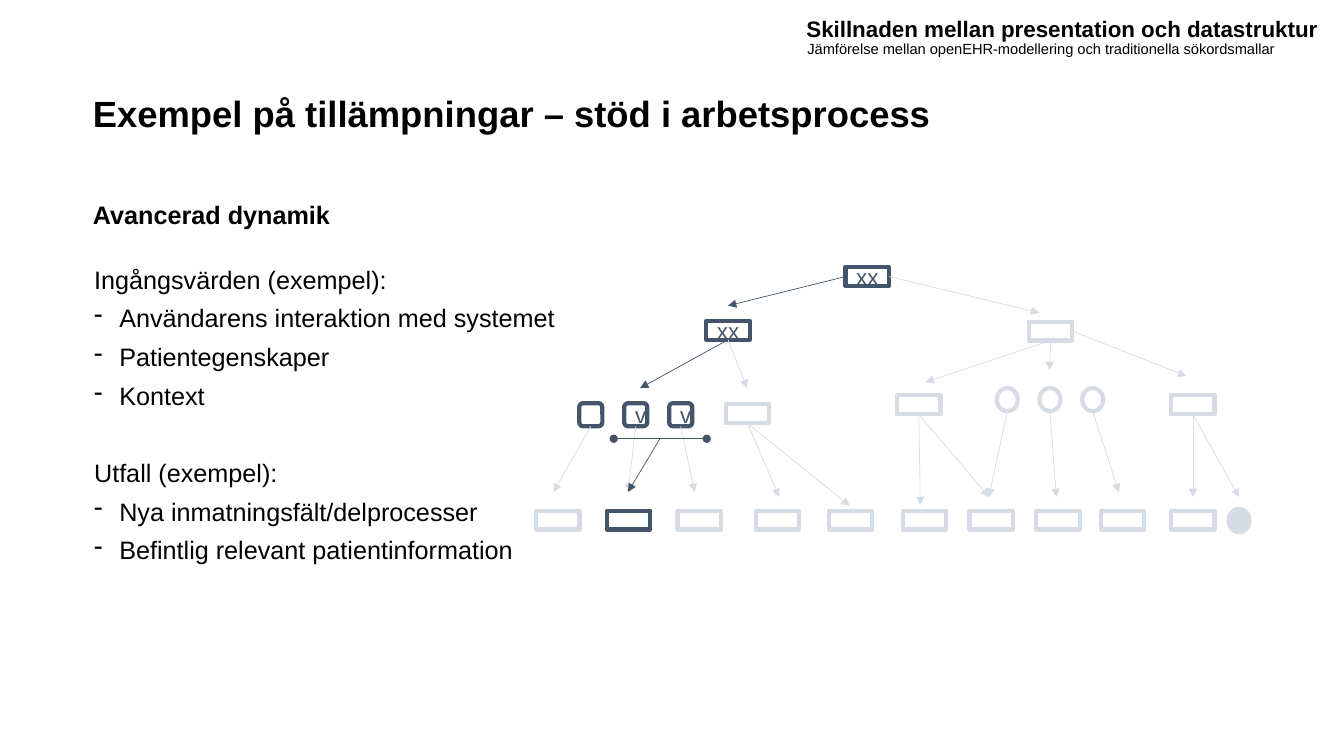
from pptx import Presentation
from pptx.dml.color import RGBColor
from pptx.enum import shapes, text
from pptx.oxml.ns import qn
from pptx.util import Pt
from lxml import etree

THEME = {
    "font": "Arial", "ink": "000000", "active": "44546A", "muted": "D6DCE5",
    "title": 26, "header": 16, "subheader": 10.5, "body": 18, "label": 16,
}

deck = Presentation()
deck.slide_width, deck.slide_height = Pt(960), Pt(540)
page = deck.slides.add_slide(deck.slide_layouts[6])


def style(para, size, color, bold=False):
    for span in para.runs:
        span.font.name = THEME["font"]
        span.font.size = Pt(THEME[size])
        span.font.bold = bold
        span.font.color.rgb = RGBColor.from_string(THEME[color])


def add_node(kind, left, top, width, height, color, label=""):
    node = page.shapes.add_shape(kind, Pt(left), Pt(top), Pt(width), Pt(height))
    node.shadow.inherit = False
    node.fill.background()
    node.line.color.rgb = RGBColor.from_string(THEME[color])
    node.line.width = Pt(3)
    if label:
        node.text_frame.text = label
        para = node.text_frame.paragraphs[0]
        para.alignment = text.PP_ALIGN.CENTER
        style(para, "label", color)
    return node


MIDDLE, TOP = text.MSO_ANCHOR.MIDDLE, text.MSO_ANCHOR.TOP
headings = [
    ("Exempel på tillämpningar – stöd i arbetsprocess",
     66.4, 28.8, 828, 104.4, "title", True, MIDDLE),
    ("Avancerad dynamik", 66.4, 142.6, 314, 30, "body", True, TOP),
    ("Skillnaden mellan presentation och datastruktur",
     576, 2.2, 384, 36.7, "header", True, MIDDLE),
    ("Jämförelse mellan openEHR-modellering och traditionella sökordsmallar",
     576.7, 28.8, 370, 20, "subheader", False, TOP),
]
body_lines = [
    ("Ingångsvärden (exempel):", False, 0),
    ("Användarens interaktion med systemet", True, 6),
    ("Patientegenskaper", True, 6),
    ("Kontext", True, 6),
    ("Utfall (exempel):", False, 33.6),
    ("Nya inmatningsfält/delprocesser", True, 6),
    ("Befintlig relevant patientinformation", True, 6),
]
headings.append(("\n".join(line[0] for line in body_lines),
                 67.2, 188.6, 716, 261, "body", False, TOP))

for words, left, top, width, height, size, bold, anchor in headings:
    box = page.shapes.add_textbox(Pt(left), Pt(top), Pt(width), Pt(height))
    frame = box.text_frame
    frame.word_wrap = True
    frame.vertical_anchor = anchor
    frame.margin_left = frame.margin_right = 0
    frame.margin_top = frame.margin_bottom = 0
    frame.text = words
    for para in frame.paragraphs:
        style(para, size, "ink", bold)

for para, (_, bulleted, gap) in zip(frame.paragraphs, body_lines):
    para.line_spacing = Pt(21.6)
    para.space_before = Pt(gap)
    if bulleted:
        props = para._p.get_or_add_pPr()
        props.set("marL", str(Pt(18)))
        props.set("indent", str(-Pt(18)))
        etree.SubElement(props, qn("a:buChar")).set("char", "-")

RECT = shapes.MSO_SHAPE.RECTANGLE
OVAL = shapes.MSO_SHAPE.OVAL
nodes = {}
for name, left, top, color, label in [
    ("root", 604, 190.8, "active", "xx"),
    ("left", 504.6, 229.2, "active", "xx"),
    ("right", 735, 229.8, "muted", ""),
    ("plan", 518.4, 288.8, "muted", ""),
    ("inner", 640.8, 282.4, "muted", ""),
    ("outer", 836.6, 282.4, "muted", ""),
]:
    nodes[name] = add_node(RECT, left, top, 31, 13.5, color, label)

for index, label in enumerate(["", "v", "v"]):
    nodes[f"check{index}"] = add_node(
        shapes.MSO_SHAPE.ROUNDED_RECTANGLE, 413.8 + 32.1 * index, 288,
        16.5, 16.5, "active", label)
for index in range(3):
    add_node(OVAL, 712 + 30.5 * index, 277.2, 15, 16.5, "muted")
end_point = add_node(OVAL, 877.6, 363.6, 15, 16.5, "muted")
end_point.fill.solid()
end_point.fill.fore_color.rgb = RGBColor.from_string(THEME["muted"])

for index, left in enumerate(
        [383, 433.6, 484, 540, 592, 645, 692.6, 740.2, 786.4, 836.6]):
    add_node(RECT, left, 364.8, 31, 13.5, "active" if index == 1 else "muted")

BOTTOM, LEFT, RIGHT = 2, 1, 3
arrows = [
    ("root", LEFT, 520, 218.4, "active"),
    ("root", RIGHT, 742.4, 223.4, "muted"),
    ("left", BOTTOM, 457.2, 277.2, "active"),
    ("left", BOTTOM, 533.6, 277.2, "muted"),
    ("right", BOTTOM, 661, 273, "muted"),
    ("right", BOTTOM, 749.6, 264.4, "muted"),
    ("right", RIGHT, 847.4, 268.6, "muted"),
    ("check0", BOTTOM, 395.4, 351.4, "muted"),
    ("check1", BOTTOM, 448.6, 351.4, "muted"),
    ("check2", BOTTOM, 496.2, 351.4, "muted"),
    ("plan", BOTTOM, 607, 361.4, "muted"),
    ("plan", BOTTOM, 556.6, 355, "muted"),
    ("inner", BOTTOM, 657.4, 360.8, "muted"),
    ("inner", BOTTOM, 706.4, 355, "muted"),
    ("outer", BOTTOM, 852.1, 355, "muted"),
    ("outer", BOTTOM, 885, 355, "muted"),
    ((719.5, 293.7), None, 706.4, 355, "muted"),
    ((750, 293.7), None, 754.6, 355, "muted"),
    ((780.5, 293.7), None, 799.2, 351.4, "muted"),
    ((471.4, 313.4), None, 448.6, 351.4, "active"),
    ((438.4, 313.4), None, 504.8, 313.4, "active"),
]
for start, side, end_x, end_y, color in arrows:
    start_x, start_y = (0, 0) if side else start
    arrow = page.shapes.add_connector(
        shapes.MSO_CONNECTOR.STRAIGHT,
        Pt(start_x), Pt(start_y), Pt(end_x), Pt(end_y))
    if side:
        arrow.begin_connect(nodes[start], side)
    arrow.line.color.rgb = RGBColor.from_string(THEME[color])
    arrow.line.width = Pt(0.5)
    outline = arrow.line._get_or_add_ln()
    bracket = start_y == end_y
    if bracket:
        etree.SubElement(outline, qn("a:headEnd")).set("type", "oval")
    tip = etree.SubElement(outline, qn("a:tailEnd"))
    tip.set("type", "oval" if bracket else "triangle")
    etree.SubElement(arrow._element.spPr, qn("a:effectLst"))

deck.save("out.pptx")
